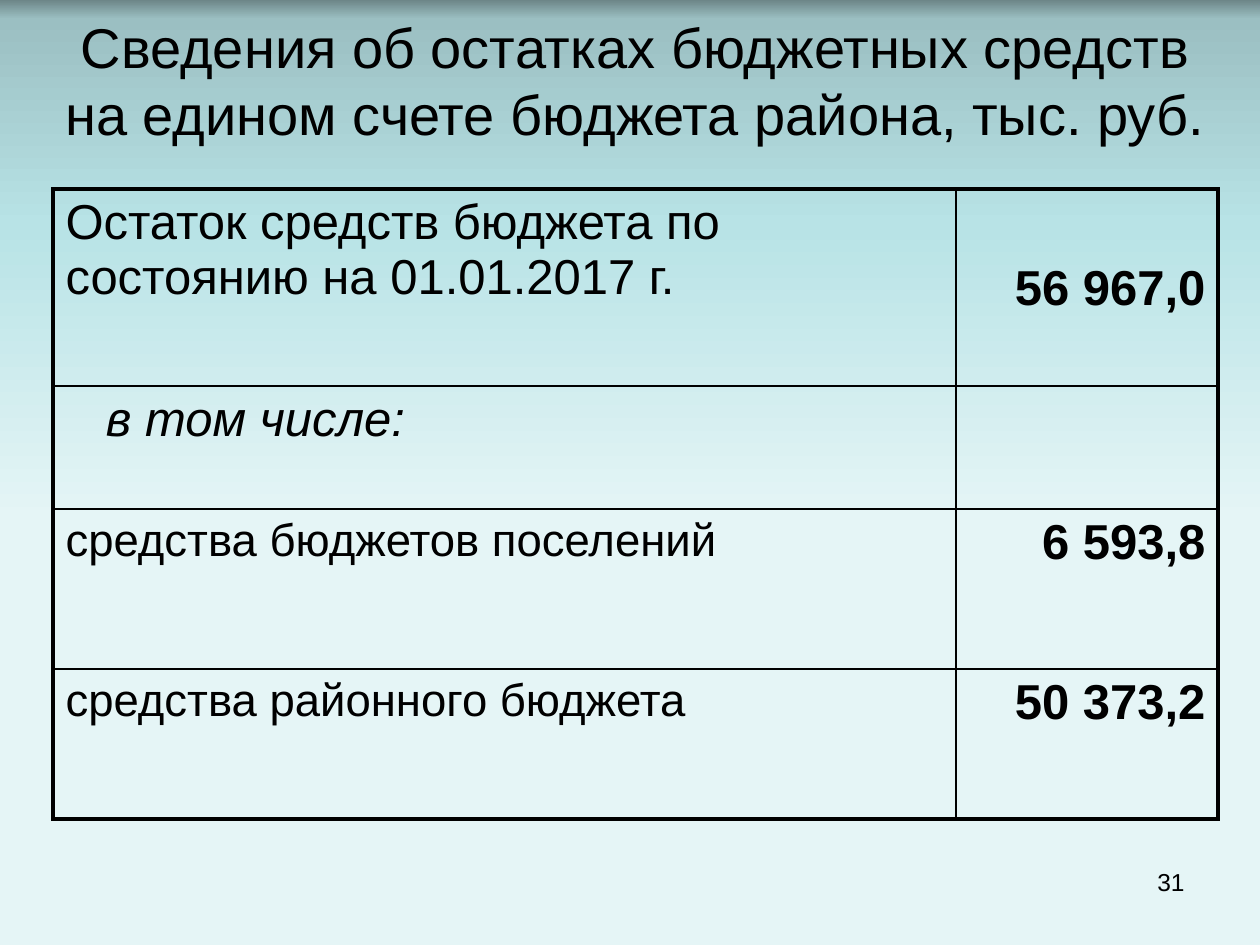
from lxml import etree
from pptx import Presentation
from pptx.dml.color import RGBColor
from pptx.enum.text import MSO_ANCHOR, PP_ALIGN
from pptx.oxml.ns import qn
from pptx.util import Emu, Pt

LEFT, CENTER, RIGHT = PP_ALIGN.LEFT, PP_ALIGN.CENTER, PP_ALIGN.RIGHT
MIDDLE = MSO_ANCHOR.MIDDLE
SCALE = 914400 / 126
INK = "000000"


def px(length):
    return Emu(round(length * SCALE))


def write(frame, text, size, align, bold=False, italic=False):
    para = frame.paragraphs[0]
    para.text = text
    para.alignment = align
    para.font.name = "Arial"
    para.font.size = Pt(size)
    para.font.bold = bold
    para.font.italic = italic
    para.font.color.rgb = RGBColor.from_string(INK)


deck = Presentation()
deck.slide_width = px(1260)
deck.slide_height = px(945)
page = deck.slides.add_slide(deck.slide_layouts[6])

page.background.fill.gradient()
page.background.fill.gradient_angle = 270
stops = next(page.element.iter(qn("a:gsLst")))
for stop in list(stops):
    stops.remove(stop)
for percent, color in [(0, "6D8688"), (2, "9BBFC2"), (24, "B8E3E6"), (55, "E5F5F6"), (100, "E5F5F6")]:
    stop = etree.SubElement(stops, qn("a:gs"), pos=str(percent * 1000))
    etree.SubElement(stop, qn("a:srgbClr"), val=color)

labels = [
    (903, 861, 294, 66, "31", 14, RIGHT),
    (32, 32, 1207, 95, "Сведения об остатках бюджетных средств на едином счете бюджета района, тыс. руб.", 32, CENTER),
]
for left, top, width, height, text, size, align in labels:
    box = page.shapes.add_textbox(px(left), px(top), px(width), px(height))
    box.text_frame.word_wrap = True
    write(box.text_frame, text, size, align)
box.text_frame.vertical_anchor = MIDDLE

rows = [
    (197, "Остаток средств бюджета по состоянию на 01.01.2017 г.", 28, "56 967,0"),
    (123, "в том числе:", 28, ""),
    (160, "средства бюджетов поселений", 26, "6 593,8"),
    (150, "средства районного бюджета", 26, "50 373,2"),
]
columns = [903, 262]
total_height = sum(row[0] for row in rows)
table = page.shapes.add_table(len(rows), len(columns), px(53), px(189), px(sum(columns)), px(total_height)).table
table.first_row = False
table.horz_banding = False
for column, width in zip(table.columns, columns):
    column.width = px(width)

for index, (height, name, size, amount) in enumerate(rows):
    table.rows[index].height = px(height)
    name_cell, amount_cell = table.rows[index].cells
    write(name_cell.text_frame, name, size, LEFT, italic=index == 1)
    write(amount_cell.text_frame, amount, 28, RIGHT, bold=True)
    for cell in (name_cell, amount_cell):
        outer = {
            "a:lnL": cell is name_cell,
            "a:lnR": cell is amount_cell,
            "a:lnT": index == 0,
            "a:lnB": index == len(rows) - 1,
        }
        properties = cell._tc.get_or_add_tcPr()
        for side, is_outer in outer.items():
            line = etree.SubElement(properties, qn(side), w=str(Pt(2.25 if is_outer else 1)))
            fill = etree.SubElement(line, qn("a:solidFill"))
            etree.SubElement(fill, qn("a:srgbClr"), val=INK)
        cell.fill.background()

table.cell(0, 1).margin_top = px(72)
table.cell(1, 0).margin_left = px(53)

deck.save("out.pptx")
